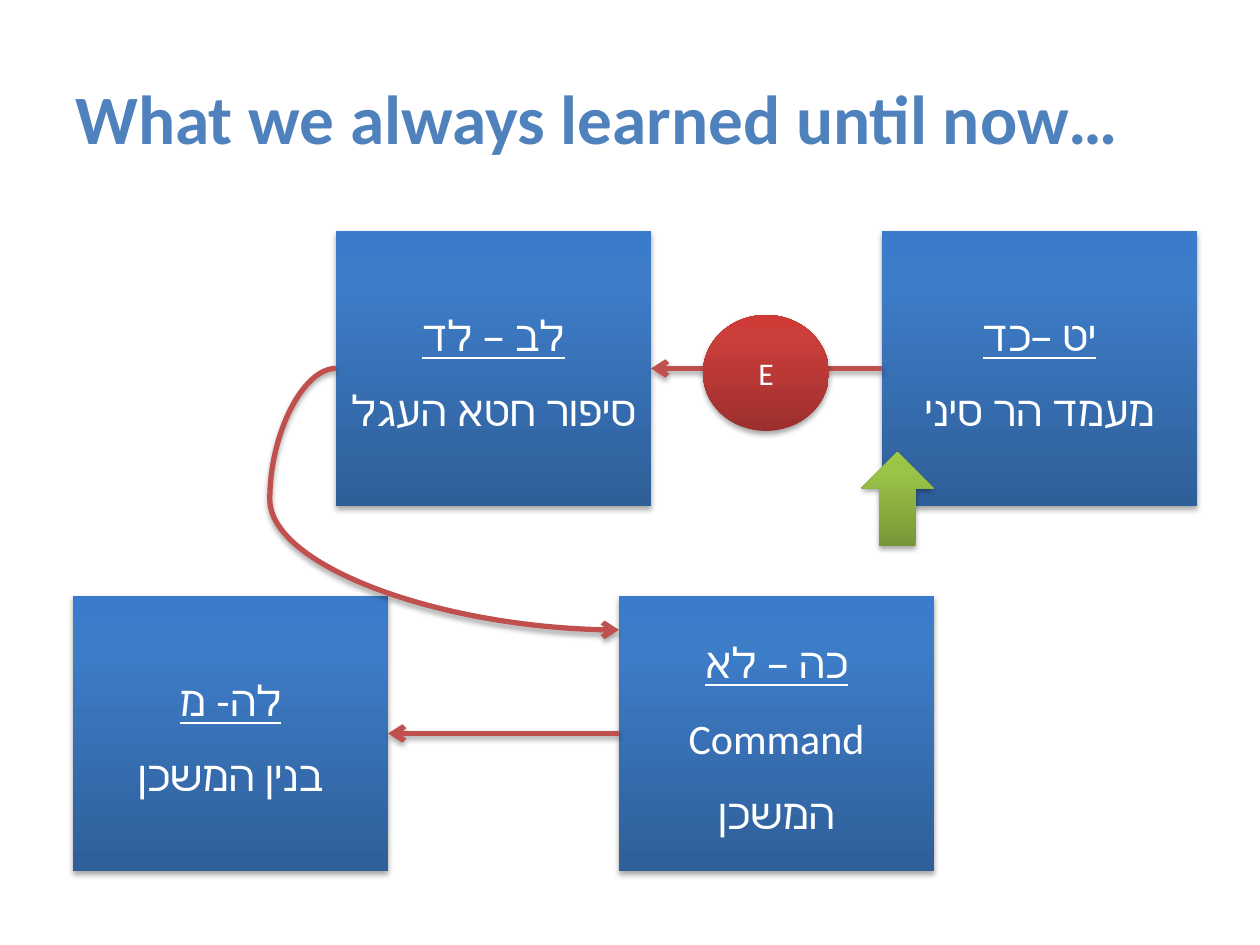
from lxml.etree import SubElement
from pptx import Presentation
from pptx.dml.color import RGBColor
from pptx.enum.shapes import MSO_CONNECTOR, MSO_SHAPE
from pptx.enum.text import MSO_ANCHOR, PP_ALIGN
from pptx.oxml import parse_xml
from pptx.oxml.ns import nsdecls, qn
from pptx.util import Pt

SCALE = 914400 / 126
BLUE = ("2F5F99", "3D7CC7", "3A7CCB")
RED = ("9C2F2D", "CB3E3A", "CE3B37")
GREEN = ("779737", "9BC348", "9DC746")
WIDE, HIGH = 315, 275


def px(num):
    return round(num * SCALE)


def color(code):
    return RGBColor.from_string(code)


def style(para, size, code, bold=False, line=False):
    font = para.font
    font.name, font.size, font.bold = "Calibri", Pt(size), bold
    font.underline = line
    font.color.rgb = color(code)


def shade(item):
    item._element.spPr.append(parse_xml(
        f'<a:effectLst {nsdecls("a")}><a:outerShdw blurRad="40000" dist="23000" '
        'dir="5400000" rotWithShape="0"><a:srgbClr val="000000">'
        '<a:alpha val="35000"/></a:srgbClr></a:outerShdw></a:effectLst>'))


def solid(slide, kind, box, tones):
    """Add a shape with a vertical gradient and a soft shadow."""
    item = slide.shapes.add_shape(kind, *map(px, box))
    stops = "".join(
        f'<a:gs pos="{pos}"><a:srgbClr val="{tone}"/></a:gs>'
        for pos, tone in zip((0, 80000, 100000), tones))
    item._element.spPr.find(qn("a:prstGeom")).addnext(parse_xml(
        f'<a:gradFill {nsdecls("a")} rotWithShape="1"><a:gsLst>{stops}</a:gsLst>'
        '<a:lin ang="16200000" scaled="0"/></a:gradFill>'))
    item.line.fill.background()
    shade(item)
    return item


def title(slide, box, text):
    frame = slide.shapes.add_textbox(*map(px, box)).text_frame
    frame.word_wrap = True
    frame.vertical_anchor = MSO_ANCHOR.MIDDLE
    frame.text = text
    style(frame.paragraphs[0], 39.6, "4F81BD", bold=True)


def card(slide, left, top, lines):
    """Add a blue box: underlined chapters, then the topic."""
    item = solid(slide, MSO_SHAPE.RECTANGLE, (left, top, WIDE, HIGH), BLUE)
    frame = item.text_frame
    frame.vertical_anchor = MSO_ANCHOR.MIDDLE
    frame.text = "\n".join(lines)
    for row, para in enumerate(frame.paragraphs):
        para.alignment = PP_ALIGN.CENTER
        para.line_spacing, para.space_after = 1.15, Pt(10)
        para._p.get_or_add_pPr().set("rtl", "1")
        style(para, 24, "FFFFFF", line=row == 0)
    return item


def badge(slide, box, text):
    item = solid(slide, MSO_SHAPE.OVAL, box, RED)
    frame = item.text_frame
    frame.vertical_anchor = MSO_ANCHOR.MIDDLE
    frame.text = text
    para = frame.paragraphs[0]
    para.alignment = PP_ALIGN.CENTER
    style(para, 18, "FFFFFF")


def arrow(slide, start, goal=None, point=(0, 0), bend=None):
    """Lead from a card's left side to a card's right side or a point."""
    kind = MSO_CONNECTOR.STRAIGHT if bend is None else MSO_CONNECTOR.CURVE
    x, y = map(px, point)
    link = slide.shapes.add_connector(
        kind, start.left, start.top + start.height // 2, x, y)
    link.begin_connect(start, 1)
    if goal is not None:
        link.end_connect(goal, 3)
    if bend is not None:
        guides = link._element.spPr.find(qn("a:prstGeom")).get_or_add_avLst()
        SubElement(guides, qn("a:gd"), name="adj1", fmla=f"val {bend}")
    link.line.color.rgb = color("C0504D")
    link.line.width = Pt(3)
    SubElement(link.line._get_or_add_ln(), qn("a:tailEnd"), type="arrow")
    shade(link)


def main():
    deck = Presentation()
    deck.slide_width, deck.slide_height = px(1260), px(945)
    slide = deck.slides.add_slide(deck.slide_layouts[6])
    title(slide, (63, 38, 1134, 157), "What we always learned until now…")

    # Chapter cards
    upper, lower = 231, 596
    sinai = card(slide, 882, upper, ("יט –כד", "מעמד הר סיני"))
    order = card(slide, 619, lower, ("כה – לא", "Command", "המשכן"))
    calf = card(slide, 336, upper, ("לב – לד", "סיפור חטא העגל"))
    build = card(slide, 73, lower, ("לה- מ", "בנין המשכן"))

    # Story order
    arrow(slide, sinai, calf)
    arrow(slide, order, build)
    arrow(slide, calf, point=(619, 630), bend=-23400)

    # Markers
    badge(slide, (703, 315, 126, 116), "E")
    solid(slide, MSO_SHAPE.UP_ARROW, (861, 452, 73, 94), GREEN)
    deck.save("out.pptx")


if __name__ == "__main__":
    main()
